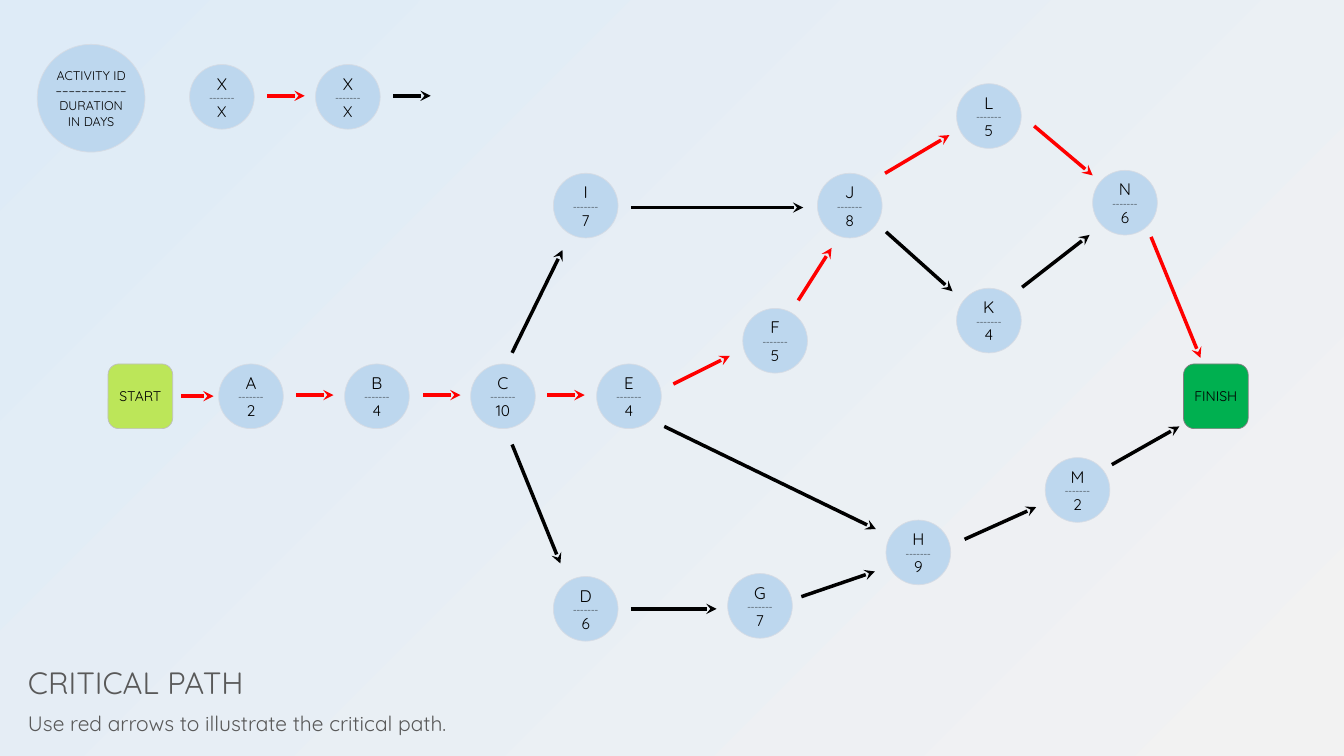
from lxml.etree import SubElement
from pptx import Presentation
from pptx.dml.color import RGBColor
from pptx.enum.shapes import MSO_CONNECTOR as Connector, MSO_SHAPE as Shape
from pptx.enum.text import MSO_ANCHOR as Anchor, MSO_AUTO_SIZE as AutoSize, PP_ALIGN as Align
from pptx.oxml.ns import qn
from pptx.util import Pt

FONT = "Quicksand"
BLACK, RED, GREY = "000000", "FF0000", "595959"
NODE_SIZE = 46.2
NODE_PITCH = 90
MAIN_ROW = 260

# Activity: (left, top, duration in days)
ACTIVITIES = {
    "D": (395.3, 411.8, 6), "I": (395.3, 123.8, 7),
    "G": (519.8, 409.7, 7), "H": (632.9, 371.5, 9),
    "M": (746.6, 326.9, 2), "J": (583.9, 123.8, 8),
    "F": (530.6, 220.3, 5), "L": (683.3, 59.8, 5),
    "K": (683.3, 205.9, 4), "N": (780.5, 121.7, 6),
}
for step, (activity, days) in enumerate([("A", 2), ("B", 4), ("C", 10), ("E", 4)]):
    ACTIVITIES[activity] = (156.2 + step * NODE_PITCH, MAIN_ROW, days)

# Arrows: (x1, y1, x2, y2)
CRITICAL_ARROWS = [
    (129.6, 283, 152.6, 283),          # START to A
    (211.7, 282.2, 238.3, 282.2),      # A to B
    (302.4, 282.2, 329, 282.2),        # B to C
    (391, 282.2, 417.6, 282.2),        # C to E
    (481, 274.3, 521.3, 254.2),        # E to F
    (570.2, 214.6, 594, 177.1),        # F to J
    (632.2, 123.8, 678.2, 96.5),       # J to L
    (738.7, 90, 780.5, 125.3),         # L to N
    (822.2, 169.2, 857.5, 255.6),      # N to FINISH
]
OTHER_ARROWS = [
    (365.8, 252, 401.8, 178.6),        # C to I
    (450.7, 148.3, 573.8, 148.3),      # I to J
    (365.8, 317.5, 400.3, 402.5),      # C to D
    (450.7, 434.9, 511.9, 434.9),      # D to G
    (474.5, 304.6, 625.7, 378),        # E to H
    (572.4, 426.2, 625, 408.2),        # G to H
    (632.9, 165.6, 680.4, 208.1),      # J to K
    (730.1, 205.2, 778.3, 167.8),      # K to N
    (689, 385.2, 740.2, 362.2),        # H to M
    (794.2, 331.9, 842.4, 304.6),      # M to FINISH
]


def color(hex_code):
    return RGBColor.from_string(hex_code)


def write_lines(frame, lines, text_color, align, **frame_format):
    """Fill a text frame with one paragraph per (text, size) pair."""
    for name, value in frame_format.items():
        setattr(frame, name, value)
    for index, (text, size) in enumerate(lines):
        paragraph = frame.add_paragraph() if index else frame.paragraphs[0]
        paragraph.alignment = align
        run = paragraph.add_run()
        run.text = text
        for name, value in {"name": FONT, "size": Pt(size)}.items():
            setattr(run.font, name, value)
        run.font.color.rgb = color(text_color)


def add_marker(slide, box, kind, fill, outline, lines):
    marker = slide.shapes.add_shape(kind, *map(Pt, box))
    marker.shadow.inherit = False
    marker.fill.solid()
    marker.fill.fore_color.rgb = color(fill)
    marker.line.color.rgb = color(outline)
    marker.line.width = Pt(0.5)
    write_lines(marker.text_frame, lines, BLACK, Align.CENTER,
                vertical_anchor=Anchor.MIDDLE, word_wrap=True,
                margin_left=0, margin_top=0, margin_right=0, margin_bottom=0)


def add_circle(slide, left, top, size, lines):
    add_marker(slide, (left, top, size, size), Shape.OVAL, "BDD7EE", "D6DCE5", lines)


def add_activity(slide, left, top, activity, days):
    add_circle(slide, left, top, NODE_SIZE,
               [(activity, 12), ("–" * 7, 5), (str(days), 11)])


def add_arrow(slide, ends, line_color):
    arrow = slide.shapes.add_connector(Connector.STRAIGHT, *map(Pt, ends))
    arrow.line.color.rgb = color(line_color)
    arrow.line.width = Pt(2.5)
    SubElement(arrow.line._get_or_add_ln(), qn("a:tailEnd"), type="stealth")
    SubElement(arrow.element.spPr, qn("a:effectLst"))


def paint_background(slide):
    fill = slide.background.fill
    fill.gradient()
    fill.gradient_angle = 135
    for stop, hex_code in zip(fill.gradient_stops, ("F2F2F2", "DEEBF7")):
        stop.color.rgb = color(hex_code)
    # The first stop is 40% opaque
    first_color = next(slide.element.iter(qn("a:srgbClr")))
    SubElement(first_color, qn("a:alpha"), val="40000")


def add_heading(slide, left, top, width):
    rows = [("CRITICAL PATH", 22, 0, 33.8, True),
            ("Use red arrows to illustrate the critical path.", 15, 33.1, 25.2, False)]
    for text, size, offset, height, wrap in rows:
        box = slide.shapes.add_textbox(Pt(left), Pt(top + offset), Pt(width), Pt(height))
        write_lines(box.text_frame, [(text, size)], GREY, Align.LEFT,
                    word_wrap=wrap, auto_size=AutoSize.SHAPE_TO_FIT_TEXT,
                    margin_left=0, margin_top=Pt(3.6),
                    margin_right=Pt(7.2), margin_bottom=Pt(3.6))


def add_legend(slide, left, top):
    add_circle(slide, left, top, 77,
               [("ACTIVITY ID", 9), ("–" * 11, 9), ("DURATION IN DAYS", 9)])
    for index, line_color in enumerate((RED, BLACK)):
        sample_left = left + 108.8 + index * NODE_PITCH
        add_activity(slide, sample_left, top + 14.4, "X", "X")
        arrow_y = top + 36.7
        add_arrow(slide, (sample_left + 55.6, arrow_y, sample_left + 82.3, arrow_y), line_color)


def add_network(slide, start_left, finish_left, top):
    # Activities and the two end points
    for activity, (left, node_top, days) in ACTIVITIES.items():
        add_activity(slide, left, node_top, activity, days)
    for left, label, fill, outline in [(start_left, "START", "BCE659", "BFBFBF"),
                                       (finish_left, "FINISH", "00B050", "808080")]:
        add_marker(slide, (left, top, NODE_SIZE, NODE_SIZE), Shape.ROUNDED_RECTANGLE,
                   fill, outline, [(label, 10)])
    # Dependencies
    for arrows, line_color in ((CRITICAL_ARROWS, RED), (OTHER_ARROWS, BLACK)):
        for ends in arrows:
            add_arrow(slide, ends, line_color)


def main():
    deck = Presentation()
    deck.slide_width, deck.slide_height = Pt(960), Pt(540)
    slide = deck.slides.add_slide(deck.slide_layouts[6])
    paint_background(slide)
    add_heading(slide, 20, 470.9, 341)
    add_network(slide, 77.2, 845.4, MAIN_ROW)
    add_legend(slide, 26.6, 31.7)
    deck.save("out.pptx")


if __name__ == "__main__":
    main()
